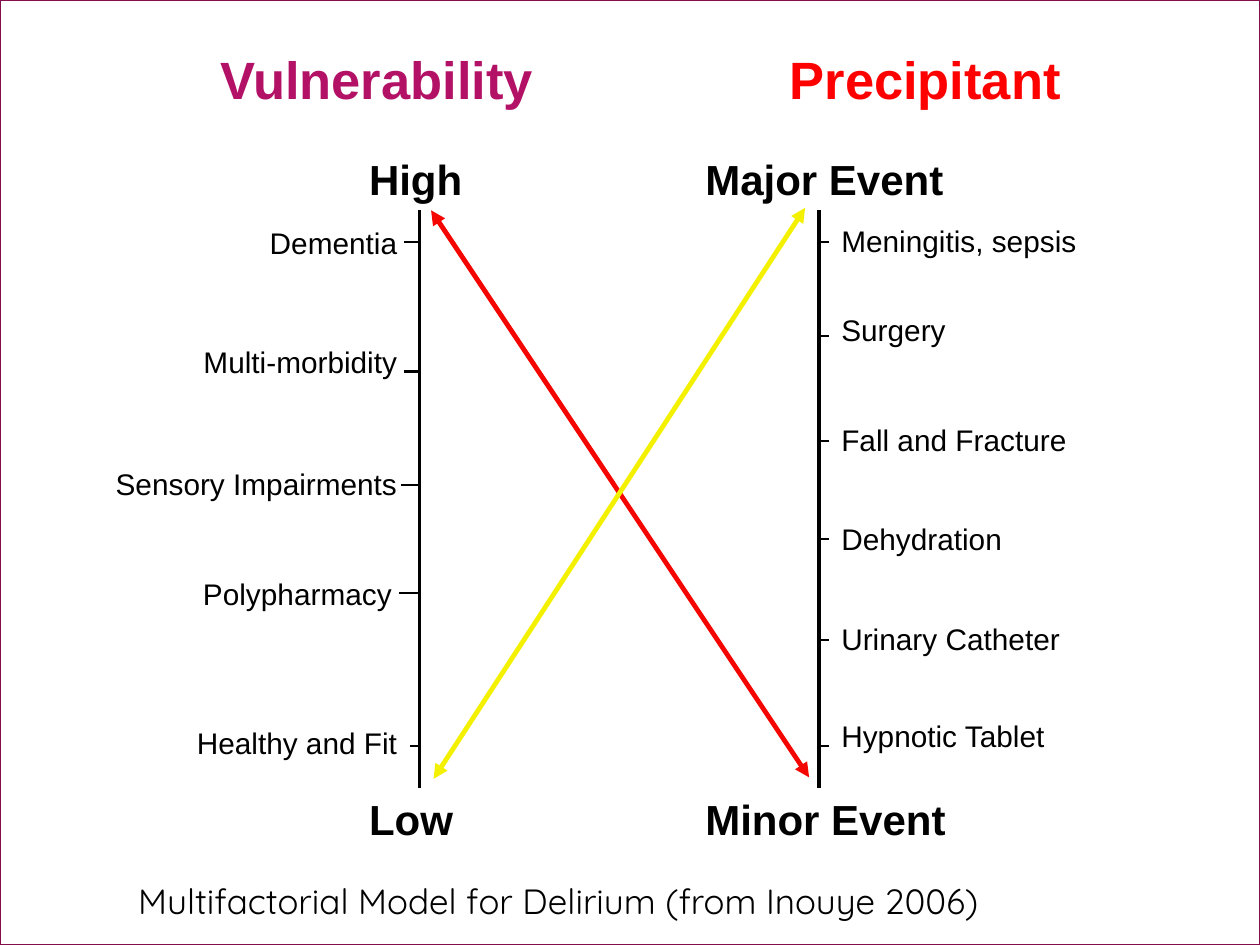
from dataclasses import dataclass

from lxml import etree
from pptx import Presentation
from pptx.dml.color import RGBColor
from pptx.enum.shapes import MSO_CONNECTOR, MSO_SHAPE
from pptx.enum.text import MSO_ANCHOR, PP_ALIGN
from pptx.oxml.ns import qn
from pptx.shapes.connector import Connector
from pptx.slide import Slide
from pptx.util import Cm, Pt

LEFT, RIGHT = PP_ALIGN.LEFT, PP_ALIGN.RIGHT
MIDDLE = MSO_ANCHOR.MIDDLE
RECTANGLE = MSO_SHAPE.RECTANGLE
STRAIGHT = MSO_CONNECTOR.STRAIGHT


@dataclass(frozen=True)
class Theme:
    paper: str = "FFFFFF"
    ink: str = "000000"
    frame: str = "840D4B"
    vulnerability: str = "B31166"
    precipitant: str = "FF0000"
    falling: str = "F40500"
    rising: str = "F4F100"
    font: str = "Arial"
    caption_font: str = "Quicksand"
    heading: float = 30
    end: float = 24
    caption: float = 20
    label: float = 17
    arrow_line: float = 2.75
    axis_line: float = 2
    frame_line: float = 1.5
    tick_line: float = 1.25


@dataclass(frozen=True)
class Factor:
    text: str
    text_y: float
    tick_y: float
    tick_end: float
    edge: float


@dataclass(frozen=True)
class Scale:
    heading: str
    heading_x: float
    color: str
    high: str
    low: str
    ends_x: float
    axis_x: float
    align: PP_ALIGN
    factors: tuple[Factor, ...]


THEME = Theme()
AXIS_TOP, AXIS_BOTTOM = 4.24, 15.88
RIGHT_TICK_END = 16.71

SCALES = (
    Scale("Vulnerability", 4.19, THEME.vulnerability, "High", "Low", 7.19, 8.46, RIGHT, (
        Factor("Dementia", 4.88, 4.88, 8.15, 8.26),
        Factor("Multi-morbidity", 7.29, 7.49, 8.15, 8.26),
        Factor("Sensory Impairments", 9.75, 9.78, 8.08, 8.26),
        Factor("Polypharmacy", 11.96, 11.96, 8.05, 8.15),
        Factor("Healthy and Fit", 14.96, 15.04, 8.26, 8.26),
    )),
    Scale("Precipitant", 15.67, THEME.precipitant, "Major Event", "Minor Event", 13.97, 16.51, LEFT, tuple(
        Factor(text, text_y, tick_y, RIGHT_TICK_END, RIGHT_TICK_END)
        for text, text_y, tick_y in (
            ("Meningitis, sepsis", 4.85, 4.88),
            ("Surgery", 6.65, 6.78),
            ("Fall and Fracture", 8.86, 8.89),
            ("Dehydration", 10.85, 10.87),
            ("Urinary Catheter", 12.88, 12.9),
            ("Hypnotic Tablet", 14.83, 15.04),
        )
    )),
)


def add_frame(s: Slide, width: int, height: int) -> None:
    sp = s.shapes.add_shape(RECTANGLE, 0, 0, width, height)
    sp.shadow.inherit = False
    sp.fill.solid()
    sp.fill.fore_color.rgb = RGBColor.from_string(THEME.paper)
    sp.line.color.rgb = RGBColor.from_string(THEME.frame)
    sp.line.width = Pt(THEME.frame_line)


def add_line(s: Slide, x1: float, y1: float, x2: float, y2: float,
             width: float, color: str = THEME.ink) -> Connector:
    line = s.shapes.add_connector(STRAIGHT, Cm(x1), Cm(y1), Cm(x2), Cm(y2))
    line.line.color.rgb = RGBColor.from_string(color)
    line.line.width = Pt(width)
    etree.SubElement(line._element.spPr, qn("a:effectLst"))
    return line


def add_double_arrow(s: Slide, x1: float, y1: float, x2: float, y2: float, color: str) -> None:
    arrow = add_line(s, x1, y1, x2, y2, THEME.arrow_line, color)
    ln = arrow.line._get_or_add_ln()
    for end in ("a:headEnd", "a:tailEnd"):
        etree.SubElement(ln, qn(end), type="triangle")


def add_text(s: Slide, text: str, x: float, center_y: float, width: float, height: float,
             size: float, align: PP_ALIGN = LEFT, color: str = THEME.ink,
             bold: bool = False, font: str = THEME.font) -> None:
    sp = s.shapes.add_textbox(Cm(x), Cm(center_y - height / 2), Cm(width), Cm(height))
    tf = sp.text_frame
    tf.word_wrap = True
    tf.vertical_anchor = MIDDLE
    p = tf.paragraphs[0]
    p.alignment = align
    r = p.add_run()
    r.text = text
    r.font.name = font
    r.font.size = Pt(size)
    r.font.bold = bold
    r.font.color.rgb = RGBColor.from_string(color)


def add_scale(s: Slide, scale: Scale) -> None:
    add_text(s, scale.heading, scale.heading_x, 1.59, 7, 1.52, THEME.heading,
             color=scale.color, bold=True)
    add_line(s, scale.axis_x, AXIS_TOP, scale.axis_x, AXIS_BOTTOM, THEME.axis_line)
    for text, y in ((scale.high, 3.61), (scale.low, 16.51)):
        add_text(s, text, scale.ends_x, y, 5.51, 1.27, THEME.end, bold=True)
    width = 8
    for factor in scale.factors:
        x = factor.edge - width if scale.align == RIGHT else factor.edge
        add_text(s, factor.text, x, factor.text_y, width, 0.97, THEME.label, scale.align)
        add_line(s, scale.axis_x, factor.tick_y, factor.tick_end, factor.tick_y, THEME.tick_line)


def main() -> None:
    prs = Presentation()
    prs.slide_width, prs.slide_height = Cm(25.4), Cm(19.05)
    s = prs.slides.add_slide(prs.slide_layouts[6])
    add_frame(s, prs.slide_width, prs.slide_height)
    add_double_arrow(s, 8.69, 4.24, 16.31, 15.67, THEME.falling)
    add_double_arrow(s, 8.74, 15.7, 16.23, 4.19, THEME.rising)
    for scale in SCALES:
        add_scale(s, scale)
    add_text(s, "Multifactorial Model for Delirium (from Inouye 2006)", 2, 18.15, 17.98, 1.04,
             THEME.caption, RIGHT, font=THEME.caption_font)
    prs.save("out.pptx")


if __name__ == "__main__":
    main()
